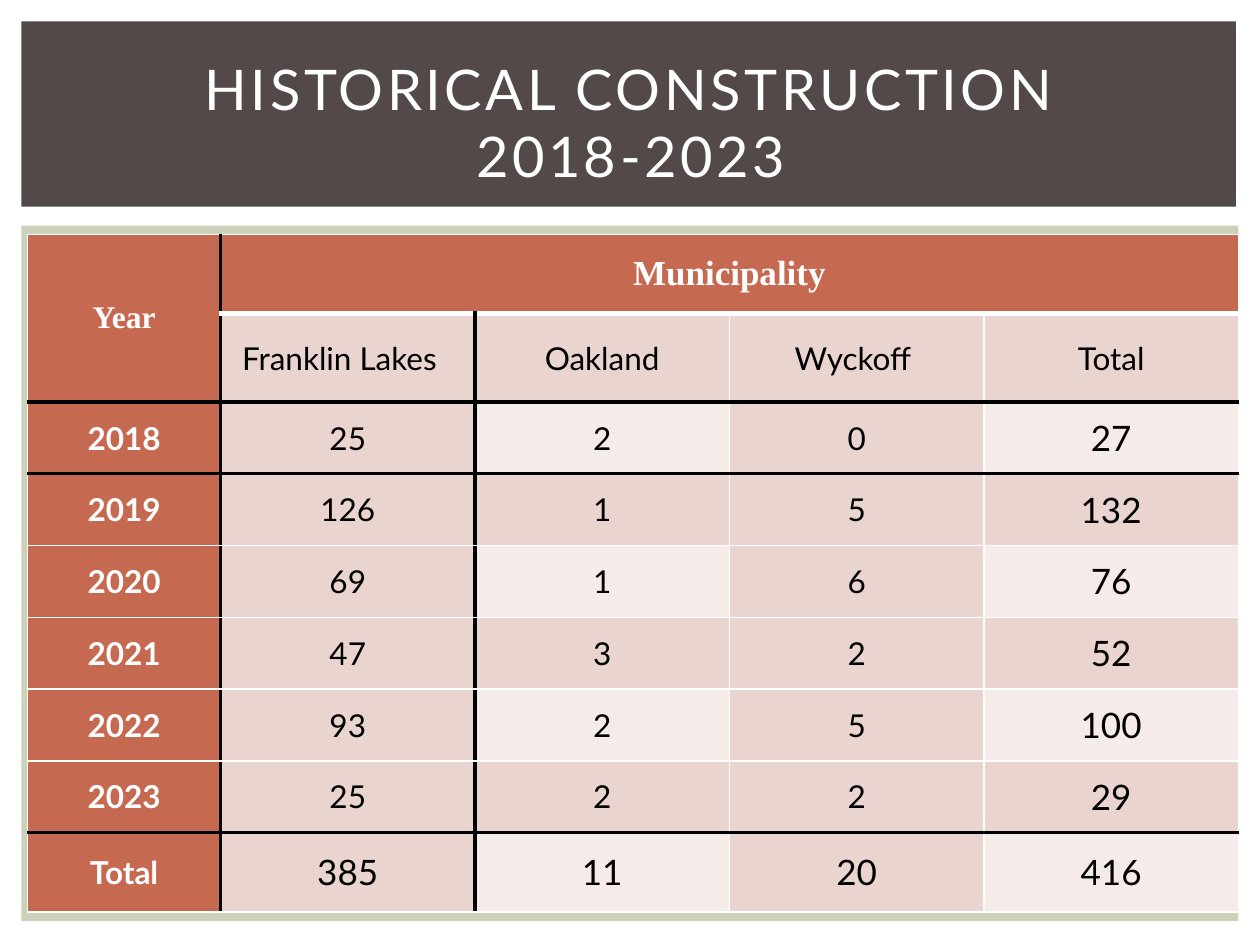
from lxml.etree import SubElement
from pptx import Presentation
from pptx.dml.color import RGBColor
from pptx.enum.shapes import MSO_SHAPE as SHAPE
from pptx.enum.text import MSO_ANCHOR as ANCHOR, MSO_AUTO_SIZE as AUTO, PP_ALIGN as ALIGN
from pptx.oxml.ns import qn
from pptx.util import Inches, Pt

WHITE = RGBColor(0xFF, 0xFF, 0xFF)
BLACK = RGBColor(0x00, 0x00, 0x00)
SAGE = RGBColor(0xCC, 0xD1, 0xB9)
BROWN = RGBColor(0x53, 0x49, 0x49)
RUST = RGBColor(0xC6, 0x69, 0x51)
PINK = RGBColor(0xEA, 0xD4, 0xD0)
PALE = RGBColor(0xF5, 0xEB, 0xE9)

THIN, RULE, HEADER_RULE = (WHITE, 1), (BLACK, 2.25), (WHITE, 3)
ROW_EDGES = {1: HEADER_RULE, 2: RULE, 3: RULE, 8: RULE}
COL_EDGES = {1: RULE, 2: RULE}
COLS = [1.53] + [2.02] * 4
ROWS = [0.63, 0.7] + [0.57] * 6 + [0.63]
EXTRA_RIGHT = {"Franklin Lakes": 0.13, "Wyckoff": 0.06}
DATA = [
    ["Year", "Municipality", "", "", ""],
    ["", "Franklin Lakes", "Oakland", "Wyckoff", "Total"],
    ["2018", "25", "2", "0", "27"],
    ["2019", "126", "1", "5", "132"],
    ["2020", "69", "1", "6", "76"],
    ["2021", "47", "3", "2", "52"],
    ["2022", "93", "2", "5", "100"],
    ["2023", "25", "2", "2", "29"],
    ["Total", "385", "11", "20", "416"],
]


class Deck:
    font = "Lato"
    header_font = "Times New Roman"

    def __init__(self):
        self.prs = Presentation()
        self.prs.slide_width, self.prs.slide_height = Inches(10), Inches(7.5)
        self.s = self.prs.slides.add_slide(self.prs.slide_layouts[5])

    def panel(self, x, y, w, h, color):
        sp = self.s.shapes.add_shape(SHAPE.RECTANGLE, Inches(x), Inches(y), Inches(w), Inches(h))
        sp.shadow.inherit = False
        sp.fill.solid()
        sp.fill.fore_color.rgb = color
        sp.line.fill.background()

    def style(self, p, size, color, bold=False, font=None):
        p.alignment = ALIGN.CENTER
        p.font.name = font or self.font
        p.font.size = Pt(size)
        p.font.bold = bold
        p.font.color.rgb = color

    def title(self, x, y, w, h, text):
        sp = self.s.shapes.title
        sp.left, sp.top, sp.width, sp.height = Inches(x), Inches(y), Inches(w), Inches(h)
        tf = sp.text_frame
        tf.text = text
        tf.word_wrap = True
        tf.auto_size = AUTO.NONE
        tf.vertical_anchor = ANCHOR.MIDDLE
        p = tf.paragraphs[0]
        self.style(p, 32, WHITE)
        for r in p.runs:
            r.font._element.set("spc", "200")
        self.s.shapes._spTree.append(sp._element)

    def border(self, cell, side, edge):
        color, width = edge
        ln = SubElement(cell._tc.get_or_add_tcPr(), qn(f"a:ln{side}"), w=str(Pt(width)))
        fill = SubElement(ln, qn("a:solidFill"))
        SubElement(fill, qn("a:srgbClr"), val=str(color))

    def cell(self, cell, text, row, col):
        header = row == 0 or col == 0
        last_row, last_col = row == len(ROWS) - 1, col == len(COLS) - 1
        bottom = row + (cell.span_height if cell.is_merge_origin else 1)
        right = col + (cell.span_width if cell.is_merge_origin else 1)
        self.border(cell, "L", COL_EDGES.get(col, THIN))
        self.border(cell, "R", COL_EDGES.get(right, THIN))
        self.border(cell, "T", ROW_EDGES.get(row, THIN))
        self.border(cell, "B", ROW_EDGES.get(bottom, THIN))
        pale = row > 1 and row % 2 == 0 and col in (2, 4)
        cell.fill.solid()
        cell.fill.fore_color.rgb = RUST if header else PALE if pale else PINK
        cell.vertical_anchor = ANCHOR.MIDDLE
        cell.margin_left = Inches(0.07)
        cell.margin_right = Inches(0.07 + EXTRA_RIGHT.get(text, 0))
        cell.margin_top = cell.margin_bottom = 0
        cell.text = text
        large = col > 0 and (row == 0 or last_row or (last_col and row > 1))
        self.style(cell.text_frame.paragraphs[0], 20 if large else 18,
                   WHITE if header else BLACK, header,
                   self.header_font if row == 0 else None)

    def table(self, x, y, data):
        tbl = self.s.shapes.add_table(len(ROWS), len(COLS), Inches(x), Inches(y),
                                      Inches(sum(COLS)), Inches(sum(ROWS))).table
        for column, width in zip(tbl.columns, COLS):
            column.width = Inches(width)
        for line, height in zip(tbl.rows, ROWS):
            line.height = Inches(height)
        tbl.cell(0, 0).merge(tbl.cell(1, 0))
        tbl.cell(0, 1).merge(tbl.cell(0, 4))
        for row, values in enumerate(data):
            for col, text in enumerate(values):
                if not tbl.cell(row, col).is_spanned:
                    self.cell(tbl.cell(row, col), text, row, col)


def main():
    deck = Deck()
    deck.panel(0.17, 1.79, 9.66, 5.52, SAGE)
    deck.panel(0.17, 0.17, 9.64, 1.47, BROWN)
    deck.title(0.42, 0.39, 9.17, 1.15, "HISTORICAL CONSTRUCTION\v2018-2023")
    deck.table(0.22, 1.86, DATA)
    deck.prs.save("out.pptx")


if __name__ == "__main__":
    main()
